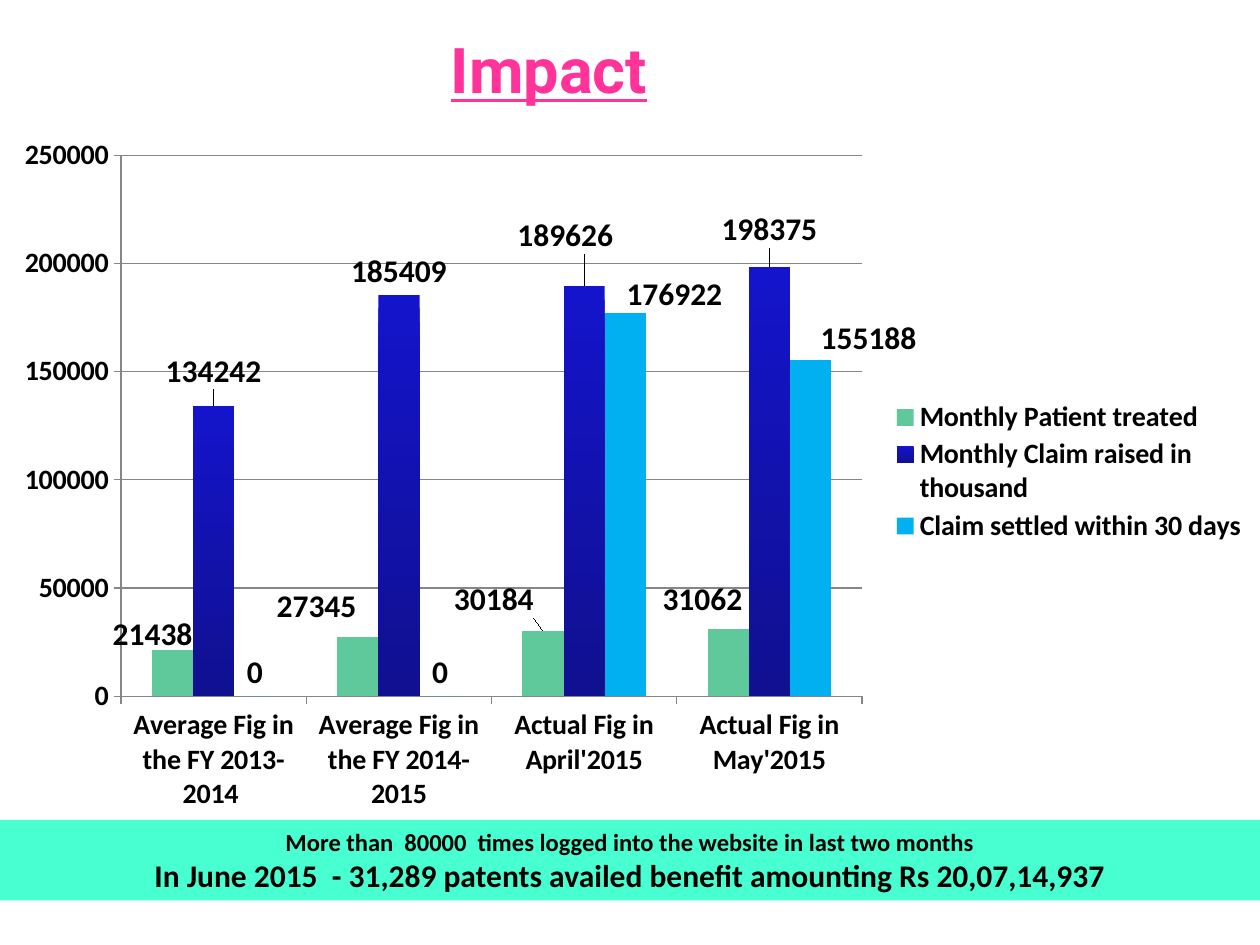
from dataclasses import dataclass

from lxml import etree
from pptx import Presentation
from pptx.chart.data import CategoryChartData
from pptx.dml.color import RGBColor
from pptx.enum.chart import (XL_CHART_TYPE, XL_LABEL_POSITION,
                             XL_LEGEND_POSITION, XL_TICK_MARK)
from pptx.enum.shapes import MSO_SHAPE
from pptx.enum.text import MSO_ANCHOR, PP_ALIGN
from pptx.util import Cm, Pt

COLUMN = XL_CHART_TYPE.COLUMN_CLUSTERED
ABOVE = XL_LABEL_POSITION.OUTSIDE_END
RIGHT = XL_LEGEND_POSITION.RIGHT
TICK_OUT = XL_TICK_MARK.OUTSIDE
RECT = MSO_SHAPE.RECTANGLE
MIDDLE = MSO_ANCHOR.MIDDLE
CENTER = PP_ALIGN.CENTER
NS = "http://schemas.openxmlformats.org/drawingml/2006/chart"


@dataclass(frozen=True)
class Theme:
    head: str = "Roboto"
    body: str = "Calibri"
    pink: str = "FF3399"
    mint: str = "47FFD1"
    ink: str = "000000"
    grid: str = "868686"
    title: int = 36
    label: int = 18
    axis: int = 16
    note: int = 14


@dataclass(frozen=True)
class Series:
    name: str
    vals: tuple[int, ...]
    fill: tuple[str, ...]  # two colours make a gradient from top to bottom
    moves: dict[int, tuple[float, float]]  # label shifts in cm, by point


THEME = Theme()
WIDTH, HEIGHT = 25.4, 14.12  # chart size in cm
CATS = ("Average Fig in the FY 2013-2014 ", "Average Fig in the FY 2014-2015",
        "Actual Fig in April'2015", "Actual Fig in May'2015")
SERIES = (
    Series("Monthly Patient treated ", (21438, 27345, 30184, 31062), ("60C99C",),
           {0: (-0.4, 0.16), 1: (-0.83, -0.14), 2: (-0.99, -0.16), 3: (-0.52, -0.12)}),
    Series("Monthly Claim raised in thousand", (134242, 185409, 189626, 198375),
           ("1414CC", "101090"),
           {0: (0, -0.22), 2: (-0.38, -0.54), 3: (0, -0.28)}),
    Series("Claim settled within 30 days", (0, 0, 176922, 155188), ("00B0F0",),
           {2: (0.99, 0.1), 3: (1.17, 0.04)}),
)
NOTES = (
    ("More than  80000  times logged into the website in last two months", THEME.note),
    ("In June 2015  - 31,289 patents availed benefit amounting Rs 20,07,14,937",
     THEME.label),
)


def style(font, size: int, face: str = THEME.body, color: str = THEME.ink) -> None:
    font.name, font.size, font.bold = face, Pt(size), True
    font.color.rgb = RGBColor.from_string(color)


def place(node, at: int, x: float, y: float, size: tuple = (), edge: bool = False) -> None:
    """Give a chart part a manual layout, in cm of the chart area."""
    for old in node.findall(f"{{{NS}}}layout"):
        node.remove(old)
    layout = etree.Element(f"{{{NS}}}layout")
    manual = etree.SubElement(layout, f"{{{NS}}}manualLayout")
    rows = []
    if edge:
        rows += [("xMode", "edge"), ("yMode", "edge")]
    rows += [("x", x / WIDTH), ("y", y / HEIGHT)]
    if size:
        rows += [("w", size[0] / WIDTH), ("h", size[1] / HEIGHT)]
    if edge and at == 0:
        rows.insert(0, ("layoutTarget", "inner"))
    for tag, val in rows:
        etree.SubElement(manual, f"{{{NS}}}{tag}", val=str(val))
    node.insert(at, layout)


def paint(bars, item: Series) -> None:
    fill = bars.format.fill
    if len(item.fill) == 1:
        fill.solid()
        fill.fore_color.rgb = RGBColor.from_string(item.fill[0])
    else:
        fill.gradient()
        fill.gradient_angle = 270
        for stop, color in zip(fill.gradient_stops, item.fill):
            stop.color.rgb = RGBColor.from_string(color)
    bars.invert_if_negative = False


def tag_bars(bars, item: Series) -> None:
    labels = bars.data_labels
    labels.show_value = True
    labels.number_format, labels.number_format_is_linked = "0", False
    labels.position = ABOVE
    style(labels.font, THEME.label)
    for idx in item.moves:
        label = bars.points[idx].data_label
        label.position = ABOVE
        style(label.font, THEME.label)
    for node in bars.data_labels._element.findall(f"{{{NS}}}dLbl"):
        idx = int(node.find(f"{{{NS}}}idx").get("val"))
        place(node, 1, *item.moves[idx])


def add_bars(slide) -> None:
    data = CategoryChartData(number_format="0")
    data.categories = CATS
    for item in SERIES:
        data.add_series(item.name, item.vals)
    chart = slide.shapes.add_chart(COLUMN, 0, Cm(2.51), Cm(WIDTH), Cm(HEIGHT), data).chart
    chart.has_title = False
    style(chart.font, THEME.axis)
    plot = chart.plots[0]
    plot.gap_width, plot.overlap, plot.vary_by_categories = 150, 0, False
    for bars, item in zip(plot.series, SERIES):
        paint(bars, item)
        tag_bars(bars, item)

    # Axes and grid
    grid = RGBColor.from_string(THEME.grid)
    vals = chart.value_axis
    vals.minimum_scale, vals.maximum_scale, vals.major_unit = 0, 250000, 50000
    vals.has_major_gridlines = True
    vals.major_gridlines.format.line.color.rgb = grid
    vals.tick_labels.number_format = "0"
    vals.tick_labels.number_format_is_linked = False
    for axis in (vals, chart.category_axis):
        axis.major_tick_mark = TICK_OUT
        axis.format.line.color.rgb = grid
        style(axis.tick_labels.font, THEME.axis)

    # Legend and plot area
    chart.has_legend = True
    legend = chart.legend
    legend.position, legend.include_in_layout = RIGHT, False
    style(legend.font, THEME.axis)
    place(legend._element, 1, 17.9, 5.5, (7.3, 3), edge=True)
    area = chart._chartSpace.find(f".//{{{NS}}}plotArea")
    place(area, 0, 2.44, 0.62, (14.94, 10.91), edge=True)


def add_title(slide) -> None:
    title = slide.shapes.title
    title.left, title.top, title.width, title.height = Cm(1.19), 0, Cm(19.76), Cm(2.77)
    frame = title.text_frame
    frame.text = "Impact"
    frame.vertical_anchor = MIDDLE
    line = frame.paragraphs[0]
    line.alignment = CENTER
    style(line.runs[0].font, THEME.title, THEME.head, THEME.pink)
    line.runs[0].font.underline = True


def add_band(slide) -> None:
    band = slide.shapes.add_shape(RECT, 0, Cm(16.53), Cm(WIDTH), Cm(1.62))
    band.shadow.inherit = False
    band.fill.solid()
    band.fill.fore_color.rgb = RGBColor.from_string(THEME.mint)
    band.line.fill.background()
    frame = band.text_frame
    frame.word_wrap, frame.vertical_anchor = True, MIDDLE
    frame.text = "\n".join(text for text, _ in NOTES)
    for line, (_, size) in zip(frame.paragraphs, NOTES):
        line.alignment = CENTER
        style(line.runs[0].font, size)


def main() -> None:
    deck = Presentation()
    deck.slide_width, deck.slide_height = Cm(25.4), Cm(19.05)
    slide = deck.slides.add_slide(deck.slide_layouts[5])
    add_title(slide)
    add_bars(slide)
    add_band(slide)
    deck.save("out.pptx")


if __name__ == "__main__":
    main()
